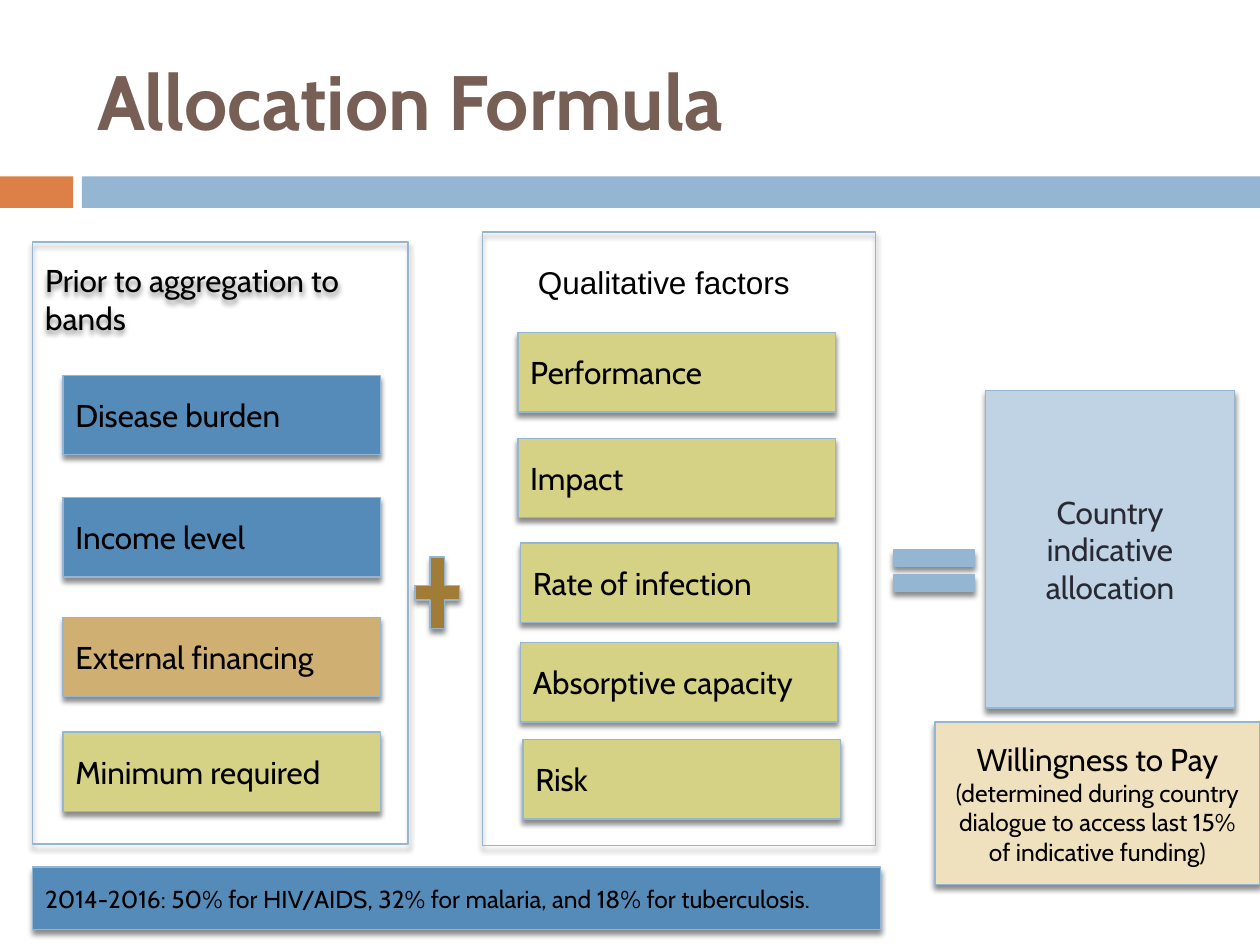
from lxml.etree import SubElement
from pptx import Presentation
from pptx.dml.color import RGBColor
from pptx.enum.shapes import MSO_SHAPE as Shape
from pptx.enum.text import MSO_ANCHOR as Anchor, PP_ALIGN as Align
from pptx.oxml.ns import qn
from pptx.util import Inches, Pt

# Content
TITLE = "Allocation Formula"
PRIOR_HEADING = "Prior to aggregation to bands"
QUALITATIVE_HEADING = "Qualitative factors"
RESULT = "Country indicative allocation"
WILLINGNESS = [
    ("Willingness to Pay", 18),
    ("(determined during country dialogue to access last 15% of indicative funding)", 14),
]
SPLIT = "2014-2016: 50% for HIV/AIDS, 32% for malaria, and 18% for tuberculosis."

BLUE, SKY, PALE_BLUE = "558BB8", "94B6D2", "BFD3E4"
GREEN, TAN, CREAM = "D5D286", "D0AF72", "EFE0BE"
ORANGE, BROWN, BLACK = "DD8047", "A17C36", "000000"

# Factors: label, left, top, fill
FACTORS = [
    ("Disease burden", 0.5, 2.98, BLUE),
    ("Income level", 0.5, 3.95, BLUE),
    ("External financing", 0.5, 4.9, TAN),
    ("Minimum required", 0.5, 5.81, GREEN),
    ("Performance", 4.11, 2.64, GREEN),
    ("Impact", 4.11, 3.48, GREEN),
    ("Rate of infection", 4.13, 4.31, GREEN),
    ("Absorptive capacity", 4.13, 5.1, GREEN),
    ("Risk", 4.15, 5.87, GREEN),
]
FACTOR_SIZE = (2.52, 0.63)


def color(value):
    return RGBColor.from_string(value)


def write(shape, lines, size=18, font="Cabin", ink=BLACK, bold=False,
          align=Align.LEFT, anchor=Anchor.MIDDLE, wrap=True):
    """Write a string, or a list of (text, size) paragraphs."""
    if isinstance(lines, str):
        lines = [(lines, size)]
    frame = shape.text_frame
    frame.word_wrap = wrap
    frame.vertical_anchor = anchor
    for index, (text, points) in enumerate(lines):
        para = frame.add_paragraph() if index else frame.paragraphs[0]
        para.alignment = align
        span = para.add_run()
        span.text = text
        span.font.size = Pt(points)
        span.font.name = font
        span.font.bold = bold
        span.font.color.rgb = color(ink)


def add_soft_shadow(shape):
    effects = shape._element.spPr.find(qn("a:effectLst"))
    shadow = SubElement(effects, qn("a:outerShdw"), blurRad=str(Pt(3)),
                        dist=str(Pt(2.4)), dir="5400000", rotWithShape="0")
    tint = SubElement(shadow, qn("a:srgbClr"), val=BLACK)
    SubElement(tint, qn("a:alpha"), val="45000")


def add_box(slide, place, fill=None, kind=Shape.RECTANGLE, framed=True):
    box = slide.shapes.add_shape(kind, *map(Inches, place))
    box.shadow.inherit = False
    if fill:
        box.fill.solid()
        box.fill.fore_color.rgb = color(fill)
    else:
        box.fill.background()
    if framed:
        box.line.color.rgb = color(SKY)
        box.line.width = Pt(0.79)
        add_soft_shadow(box)
    else:
        box.line.fill.background()
    return box


deck = Presentation()
deck.slide_width, deck.slide_height = Inches(10), Inches(7.5)
slide = deck.slides.add_slide(deck.slide_layouts[5])

# Title and band
title = slide.shapes.title
title.left, title.top, title.width, title.height = map(Inches, (0.67, 0.25, 8.92, 1.08))
write(title, TITLE, size=44, ink="775F55", bold=True)
add_box(slide, (0, 1.4, 0.58, 0.25), ORANGE, framed=False)
add_box(slide, (0.65, 1.4, 9.35, 0.25), SKY, framed=False)

# Panels with headings
prior = add_box(slide, (0.26, 1.92, 2.98, 4.78))
prior.text_frame.margin_top = Inches(0.15)
write(prior, PRIOR_HEADING, anchor=Anchor.TOP)
add_box(slide, (3.83, 1.84, 3.12, 4.87))
heading = slide.shapes.add_textbox(*map(Inches, (4.17, 2.04, 2.31, 0.4)))
write(heading, QUALITATIVE_HEADING, font="Arial", anchor=Anchor.TOP, wrap=False)

# Factors
for label, left, top, fill in FACTORS:
    write(add_box(slide, (left, top, *FACTOR_SIZE), fill), label)

# Operators
add_box(slide, (3.23, 4.32, 0.48, 0.77), BROWN, Shape.MATH_PLUS)
add_box(slide, (6.98, 4.25, 0.87, 0.56), SKY, Shape.MATH_EQUAL)

# Result and notes
result = add_box(slide, (7.82, 3.1, 1.98, 2.52), PALE_BLUE)
write(result, RESULT, ink="292934", align=Align.CENTER)
willingness = add_box(slide, (7.42, 5.73, 2.58, 1.29), CREAM)
write(willingness, WILLINGNESS, align=Align.CENTER)
write(add_box(slide, (0.26, 6.88, 6.73, 0.5), BLUE), SPLIT, size=14)

deck.save("out.pptx")
